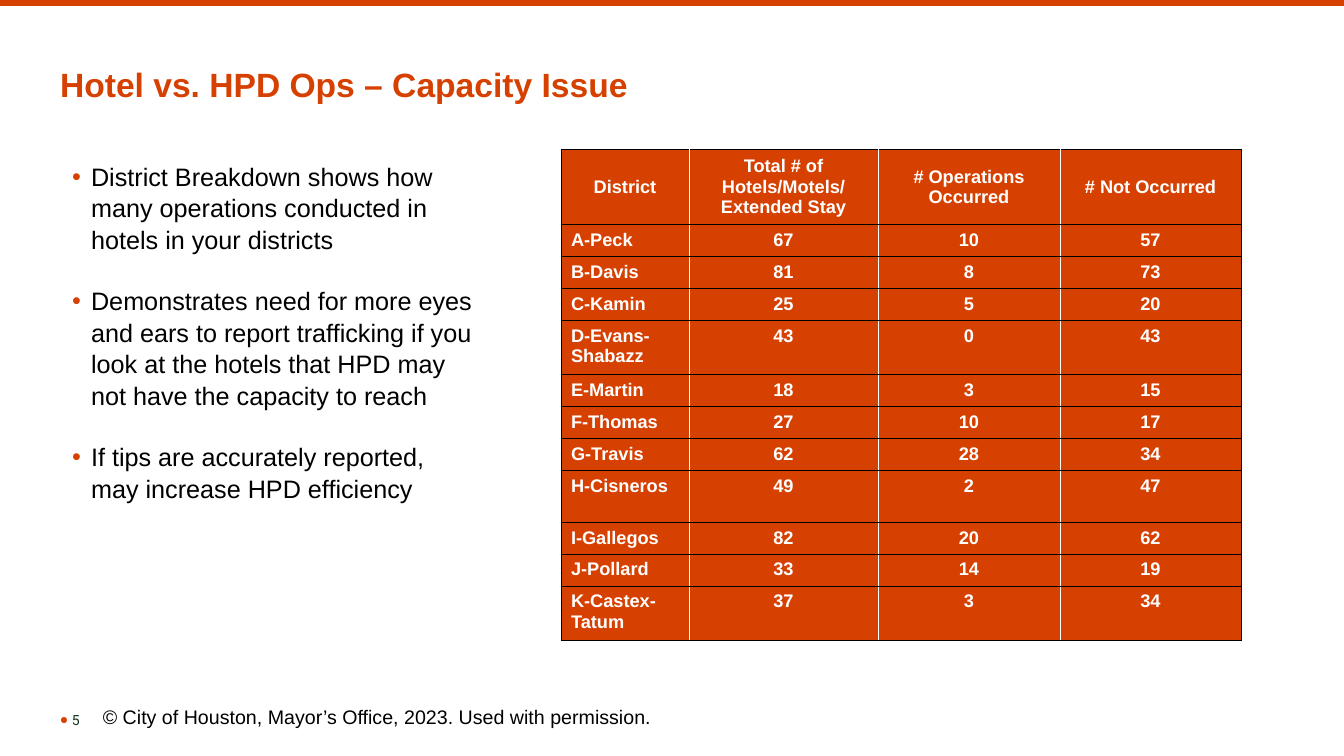
from dataclasses import dataclass

from lxml import etree
from pptx import Presentation
from pptx import util as u
from pptx.dml.color import RGBColor
from pptx.enum import shapes, text
from pptx.oxml import ns

EMU_PER_PX = 914400 / 100.8


def px(length):
    return u.Emu(round(length * EMU_PER_PX))


@dataclass(frozen=True)
class Theme:
    accent: str = "D64000"
    ink: str = "000000"
    paper: str = "FFFFFF"
    number: str = "123121"
    font: str = "Arial"
    number_font: str = "Roboto"
    title_size: int = 24
    body_size: int = 18
    credit_size: int = 14
    table_size: int = 13
    number_size: int = 10
    rule_width: float = 5
    border_width: float = 0.5


class SlideBuilder:
    def __init__(self, deck, theme):
        self.theme = theme
        self.slide = deck.slides.add_slide(deck.slide_layouts[1])

    def place(self, part, box):
        part.left, part.top, part.width, part.height = map(px, box)

    def style(self, paragraph, size, color, bold=False, font=None):
        for run in paragraph.runs:
            run.font.name = font or self.theme.font
            run.font.size = u.Pt(size)
            run.font.bold = bold
            run.font.color.rgb = RGBColor.from_string(color)

    def bullet(self, paragraph, symbol, indent):
        props = paragraph._p.get_or_add_pPr()
        props.set("marL", str(px(indent)))
        props.set("indent", str(-px(indent)))
        color = etree.SubElement(props, ns.qn("a:buClr"))
        etree.SubElement(color, ns.qn("a:srgbClr"), val=self.theme.accent)
        etree.SubElement(props, ns.qn("a:buFont"), typeface=self.theme.font)
        etree.SubElement(props, ns.qn("a:buChar"), char=symbol)

    def rule(self, y, width):
        line = self.slide.shapes.add_connector(
            shapes.MSO_CONNECTOR.STRAIGHT, 0, px(y), px(width), px(y))
        line.line.color.rgb = RGBColor.from_string(self.theme.accent)
        line.line.width = u.Pt(self.theme.rule_width)
        etree.SubElement(line._element.spPr, ns.qn("a:effectLst"))

    def title(self, wording, box):
        heading = self.slide.shapes.title
        self.place(heading, box)
        frame = heading.text_frame
        frame.text = wording
        frame.auto_size = text.MSO_AUTO_SIZE.NONE
        frame.vertical_anchor = text.MSO_ANCHOR.MIDDLE
        frame.paragraphs[0].alignment = text.PP_ALIGN.LEFT
        frame.paragraphs[0].line_spacing = 0.9
        self.style(frame.paragraphs[0], self.theme.title_size, self.theme.accent, True)

    def bullets(self, points, box):
        body = self.slide.placeholders[1]
        self.place(body, box)
        frame = body.text_frame
        frame.text = "\n".join(points)
        frame.auto_size = text.MSO_AUTO_SIZE.NONE
        for order, paragraph in enumerate(frame.paragraphs):
            self.bullet(paragraph, "•", 19)
            paragraph.line_spacing = 1.04
            paragraph.space_before = u.Pt(21.6 if order else 0)
            self.style(paragraph, self.theme.body_size, self.theme.ink)

    def label(self, wording, box, size, color, font=None, symbol=None):
        note = self.slide.shapes.add_textbox(*map(px, box))
        frame = note.text_frame
        frame.word_wrap = True
        frame.text = wording
        if symbol:
            frame.vertical_anchor = text.MSO_ANCHOR.MIDDLE
            self.bullet(frame.paragraphs[0], symbol, 12)
        self.style(frame.paragraphs[0], size, color, font=font)

    def borders(self, cell, first, last):
        outer, inner = self.theme.ink, self.theme.paper
        sides = {"L": outer if first else inner, "R": outer if last else inner,
                 "T": outer, "B": outer}
        props = cell._tc.get_or_add_tcPr()
        for side, color in sides.items():
            line = etree.SubElement(props, ns.qn(f"a:ln{side}"),
                                    w=str(u.Pt(self.theme.border_width)))
            fill = etree.SubElement(line, ns.qn("a:solidFill"))
            etree.SubElement(fill, ns.qn("a:srgbClr"), val=color)

    def table(self, rows, left, top, widths, heights):
        grid = self.slide.shapes.add_table(
            len(rows), len(widths), px(left), px(top),
            px(sum(widths)), px(sum(heights))).table
        for column, width in zip(grid.columns, widths):
            column.width = px(width)
        for row, height in zip(grid.rows, heights):
            row.height = px(height)
        for r, values in enumerate(rows):
            for c, value in enumerate(values):
                self.cell(grid.cell(r, c), str(value), r == 0, c == 0,
                          c == len(widths) - 1)

    def cell(self, cell, wording, header, first, last):
        self.borders(cell, first, last)
        cell.fill.solid()
        cell.fill.fore_color.rgb = RGBColor.from_string(self.theme.accent)
        cell.vertical_anchor = text.MSO_ANCHOR.MIDDLE if header else text.MSO_ANCHOR.TOP
        cell.text_frame.text = wording
        left_aligned = first and not header
        for paragraph in cell.text_frame.paragraphs:
            paragraph.alignment = (text.PP_ALIGN.LEFT if left_aligned
                                   else text.PP_ALIGN.CENTER)
            self.style(paragraph, self.theme.table_size, self.theme.paper, True)


POINTS = [
    "District Breakdown shows how many operations conducted in hotels in your districts",
    "Demonstrates need for more eyes and ears to report trafficking if you look at "
    "the hotels that HPD may not have the capacity to reach",
    "If tips are accurately reported, may increase HPD efficiency",
]
HEADINGS = ("District", "Total # of Hotels/Motels/\nExtended Stay",
            "# Operations Occurred", "# Not Occurred")
DISTRICTS = [
    ("A-Peck", 67, 10, 57),
    ("B-Davis", 81, 8, 73),
    ("C-Kamin", 25, 5, 20),
    ("D-Evans-Shabazz", 43, 0, 43),
    ("E-Martin", 18, 3, 15),
    ("F-Thomas", 27, 10, 17),
    ("G-Travis", 62, 28, 34),
    ("H-Cisneros", 49, 2, 47),
    ("I-Gallegos", 82, 20, 62),
    ("J-Pollard", 33, 14, 19),
    ("K-Castex-Tatum", 37, 3, 34),
]
TALL_DISTRICTS = {"D-Evans-Shabazz": 53, "H-Cisneros": 52, "K-Castex-Tatum": 53}


def main():
    deck = Presentation()
    deck.slide_width, deck.slide_height = px(1344), px(756)
    theme = Theme()
    page = SlideBuilder(deck, theme)
    page.rule(3, 1344)
    page.title("Hotel vs. HPD Ops – Capacity Issue", (50, 64, 1243, 46))
    page.label("5", (50, 706, 55, 27), theme.number_size, theme.number,
               theme.number_font, "●")
    page.bullets(POINTS, (62, 155, 422, 438))
    heights = [74] + [TALL_DISTRICTS.get(name, 32) for name, *_ in DISTRICTS]
    page.table([HEADINGS, *DISTRICTS], 561, 149, (128, 189, 182, 181), heights)
    page.label("© City of Houston, Mayor’s Office, 2023. Used with permission.",
               (93, 700, 684, 34), theme.credit_size, theme.ink)
    deck.save("out.pptx")


if __name__ == "__main__":
    main()
